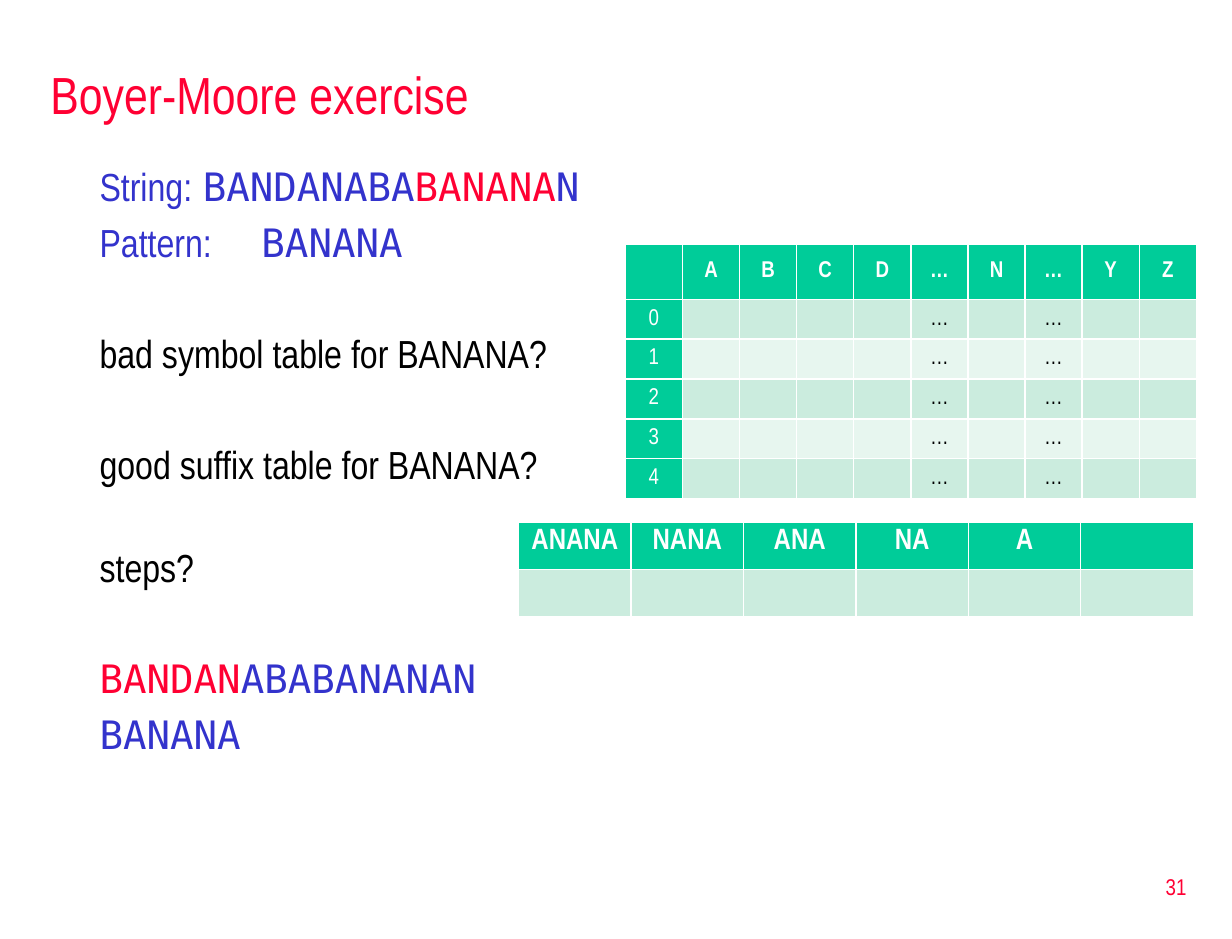
from pptx import Presentation
from pptx.dml.color import RGBColor
from pptx.enum.text import MSO_ANCHOR, PP_ALIGN
from pptx.util import Inches, Pt

RED = RGBColor(0xFF, 0x00, 0x33)
BLUE = RGBColor(0x33, 0x33, 0xCC)
BLACK = RGBColor(0x00, 0x00, 0x00)
WHITE = RGBColor(0xFF, 0xFF, 0xFF)
GREEN = RGBColor(0x00, 0xCC, 0x99)
BANDS = RGBColor(0xCB, 0xEC, 0xDE), RGBColor(0xE7, 0xF6, 0xEF)
SANS, MONO = "Arial Narrow", "DejaVu Sans Mono"

TITLE = "Boyer-Moore exercise"
PAGE = "31"
# Each line: space before in points, then runs of (text, font, colour)
LINES = [
    (5.6, [("String:\t", SANS, BLUE), ("BANDANABA", MONO, BLUE),
           ("BANANA", MONO, RED), ("N", MONO, BLUE)]),
    (5.6, [("Pattern:\t", SANS, BLUE), ("BANANA", MONO, BLUE)]),
    (39.5, [("bad symbol table for BANANA?", SANS, BLACK)]),
    (39.5, [("good suffix table for BANANA?", SANS, BLACK)]),
    (34, [("steps?", SANS, BLACK)]),
    (39.5, [("BANDAN", MONO, RED), ("ABABANANAN", MONO, BLUE)]),
    (5.6, [("BANANA", MONO, BLUE)]),
]
SYMBOLS = ["", "A", "B", "C", "D", "…", "N", "…", "Y", "Z"]
BAD_SYMBOL = [SYMBOLS] + [
    [str(k)] + ["…" if s == "…" else "" for s in SYMBOLS[1:]] for k in range(5)]
SUFFIXES = ["ANANA", "NANA", "ANA", "NA", "A", ""]
GOOD_SUFFIX = [SUFFIXES, [""] * len(SUFFIXES)]


def set_font(font, size, color, name=SANS, bold=False):
    font.size, font.name, font.bold = Pt(size), name, bold
    font.color.rgb = color


def add_grid(slide, rows, box, heights, size, margin, anchor, head_column=False):
    """Add a table with a green header row, tinted bands and equal columns."""
    table = slide.shapes.add_table(
        len(rows), len(rows[0]), *[Inches(v) for v in box]).table
    for row, height in zip(table.rows, heights):
        row.height = Inches(height)
    for i, row in enumerate(rows):
        for j, text in enumerate(row):
            cell = table.cell(i, j)
            head = i == 0 or (head_column and j == 0)
            cell.fill.solid()
            cell.fill.fore_color.rgb = GREEN if head else BANDS[(i - 1) % 2]
            cell.margin_top = cell.margin_bottom = Inches(margin)
            cell.vertical_anchor = anchor
            p = cell.text_frame.paragraphs[0]
            p.text, p.alignment = text, PP_ALIGN.CENTER
            set_font(p.font, size, WHITE if head else BLACK, bold=i == 0)


prs = Presentation()
prs.slide_width, prs.slide_height = Inches(10.5), Inches(8)
slide = prs.slides.add_slide(prs.slide_layouts[5])

title = slide.shapes.title
title.left, title.top = Inches(0.33), Inches(0.42)
title.width, title.height = Inches(9.92), Inches(0.75)
title.text = TITLE
title.text_frame.vertical_anchor = MSO_ANCHOR.MIDDLE
p = title.text_frame.paragraphs[0]
p.alignment = PP_ALIGN.LEFT
set_font(p.font, 32, RED)

body = slide.shapes.add_textbox(Inches(0.75), Inches(1.33), Inches(9.52), Inches(5.92))
tf = body.text_frame
tf.word_wrap = True
for i, (space, runs) in enumerate(LINES):
    p = tf.add_paragraph() if i else tf.paragraphs[0]
    p.space_before = Pt(space)
    pPr = p._p.get_or_add_pPr()
    pPr.set("marL", str(Inches(0.38)))
    pPr.set("indent", str(-Inches(0.38)))
    for text, name, color in runs:
        r = p.add_run()
        r.text = text
        set_font(r.font, 24, color, name)

number = slide.shapes.add_textbox(Inches(8.02), Inches(7.29), Inches(2.19), Inches(0.53))
tf = number.text_frame
tf.word_wrap = True
tf.vertical_anchor = MSO_ANCHOR.MIDDLE
p = tf.paragraphs[0]
p.text, p.alignment = PAGE, PP_ALIGN.RIGHT
set_font(p.font, 14, RED)

add_grid(slide, BAD_SYMBOL, (5.33, 2.08, 4.87, 2.17), [0.47] + [0.34] * 5,
         14, 0, MSO_ANCHOR.MIDDLE, head_column=True)
add_grid(slide, GOOD_SUFFIX, (4.42, 4.45, 5.75, 0.8), [0.4] * 2,
         18, 0.05, MSO_ANCHOR.TOP)

prs.save("out.pptx")
